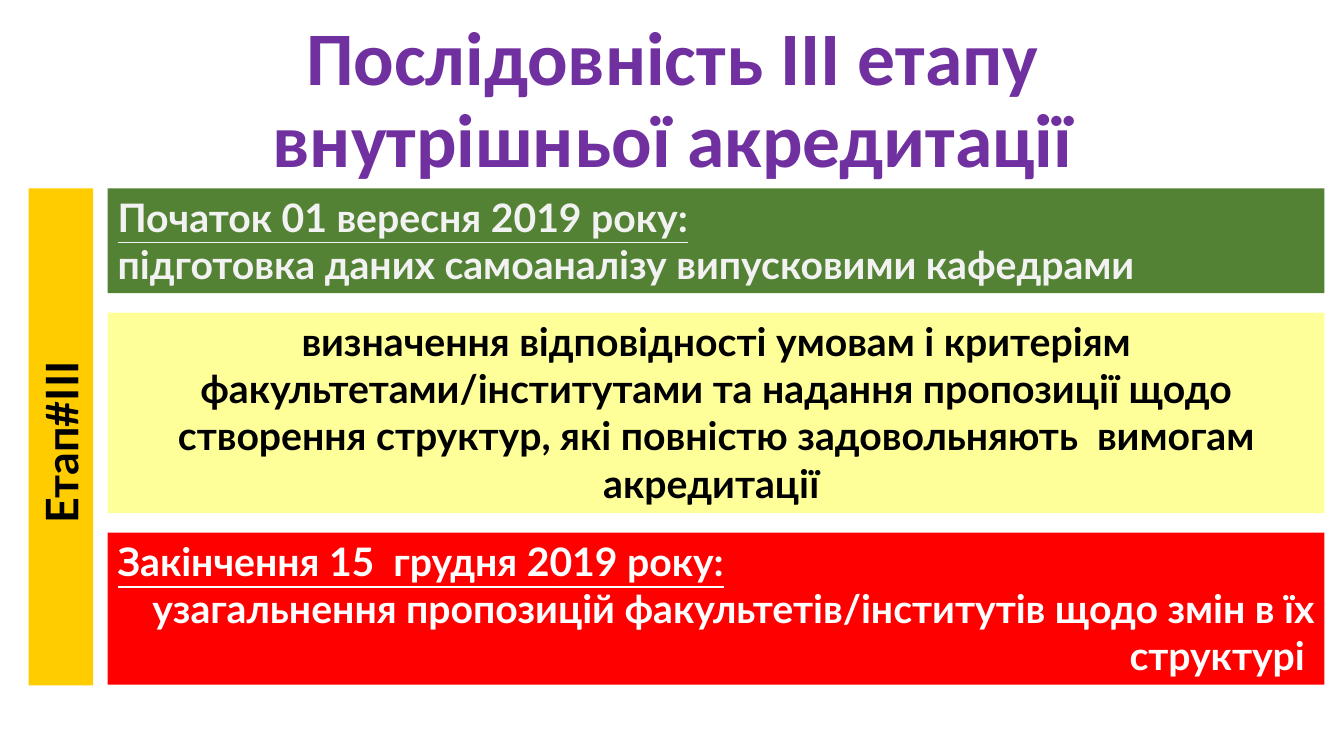
from pptx import Presentation
from pptx.dml.color import RGBColor
from pptx.enum.shapes import MSO_SHAPE as Shape
from pptx.enum.text import MSO_ANCHOR as Anchor, MSO_AUTO_SIZE as AutoSize, PP_ALIGN as Align
from pptx.util import Pt

PURPLE = RGBColor(0x70, 0x30, 0xA0)
AMBER = RGBColor(0xFF, 0xCC, 0x00)
GREEN = RGBColor(0x54, 0x82, 0x35)
YELLOW = RGBColor(0xFF, 0xFF, 0x99)
RED = RGBColor(0xFF, 0x00, 0x00)
BLACK = RGBColor(0x00, 0x00, 0x00)
WHITE = RGBColor(0xFF, 0xFF, 0xFF)
PALE = RGBColor(0xF2, 0xF2, 0xF2)

STEP_GAP = Pt(13.8)

# Each step: height, fill, text colour, underlined heading, body, body alignment
STEPS = [
    (Pt(75), GREEN, PALE, "Початок 01 вересня 2019 року:",
     "підготовка даних самоаналізу випусковими кафедрами", Align.LEFT),
    (Pt(143.3), YELLOW, BLACK, None,
     "визначення відповідності умовам і критеріям факультетами/інститутами "
     "та надання пропозиції щодо створення структур, які повністю "
     "задовольняють  вимогам акредитації ", Align.CENTER),
    (Pt(108.7), RED, WHITE, "Закінчення 15  грудня 2019 року:",
     "узагальнення пропозицій факультетів/інститутів щодо змін в їх структурі ",
     Align.RIGHT),
]


def write(para, text, size, color, align, font="Lato", underline=False):
    para.text = text
    para.alignment = align
    for span in para.runs:
        span.font.name = font
        span.font.size = Pt(size)
        span.font.bold = True
        span.font.underline = underline
        span.font.color.rgb = color


def add_panel(page, left, top, width, height, fill):
    """Add a flat rectangle and return it ready for text."""
    panel = page.shapes.add_shape(Shape.RECTANGLE, left, top, width, height)
    panel.shadow.inherit = False
    panel.fill.solid()
    panel.fill.fore_color.rgb = fill
    panel.line.fill.background()
    frame = panel.text_frame
    frame.word_wrap = True
    frame.vertical_anchor = Anchor.TOP
    frame.auto_size = AutoSize.SHAPE_TO_FIT_TEXT
    return panel


def add_title(page, left, top, width, height):
    box = page.shapes.add_textbox(left, top, width, height)
    frame = box.text_frame
    frame.word_wrap = True
    frame.vertical_anchor = Anchor.BOTTOM
    para = frame.paragraphs[0]
    write(para, "Послідовність ІІІ етапу внутрішньої акредитації",
          54, PURPLE, Align.CENTER, font="Calibri")
    para.line_spacing = 0.9


def add_stage_bar(page, left, top, width, height):
    """Add the upright bar; its frame is turned about the bar's centre."""
    shift = (height - width) // 2
    bar = add_panel(page, left - shift, top + shift, height, width, AMBER)
    bar.rotation = 270
    write(bar.text_frame.paragraphs[0], "Етап#ІІІ ", 32, BLACK, Align.CENTER)


def add_steps(page, left, top, width):
    for height, fill, color, heading, body, align in STEPS:
        frame = add_panel(page, left, top, width, height, fill).text_frame
        para = frame.paragraphs[0]
        if heading:
            write(para, heading, 28, color, Align.LEFT, underline=True)
            para = frame.add_paragraph()
        write(para, body, 28, color, align)
        top += height + STEP_GAP


def main():
    deck = Presentation()
    deck.slide_width, deck.slide_height = Pt(960), Pt(540)
    page = deck.slides.add_slide(deck.slide_layouts[6])
    add_title(page, Pt(88.5), Pt(18.7), Pt(784), Pt(116))
    add_stage_bar(page, Pt(20.5), Pt(134.5), Pt(46), Pt(355))
    add_steps(page, Pt(77), Pt(134.5), Pt(869))
    deck.save("out.pptx")


if __name__ == "__main__":
    main()
